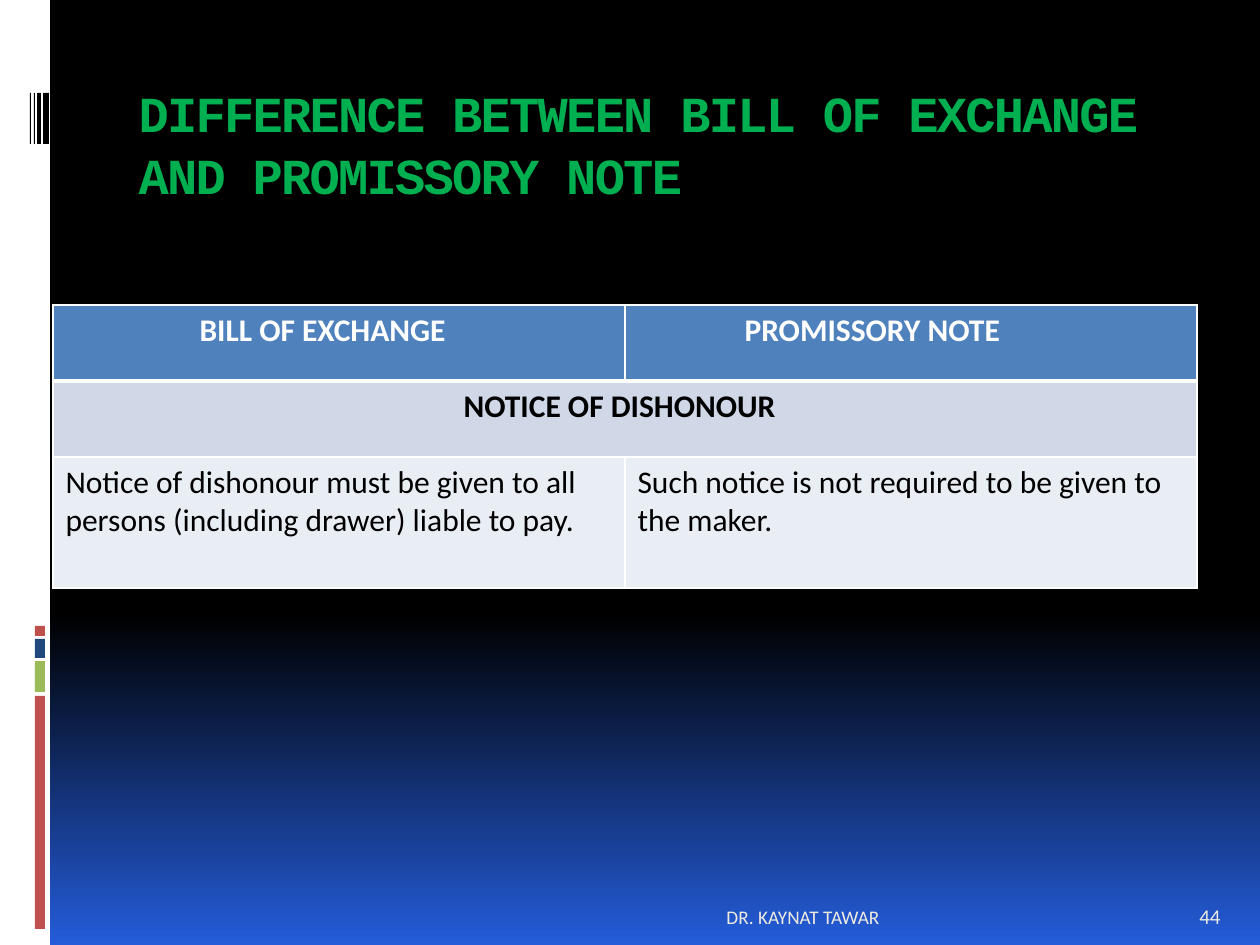
import lxml.etree
import pptx
import pptx.dml.color
import pptx.enum.shapes
import pptx.enum.text
import pptx.oxml.ns
import pptx.util

RGBColor = pptx.dml.color.RGBColor
Align = pptx.enum.text.PP_ALIGN
Anchor = pptx.enum.text.MSO_ANCHOR

WHITE = RGBColor(0xFF, 0xFF, 0xFF)
BLACK = RGBColor(0x00, 0x00, 0x00)
ROYAL = RGBColor(0x24, 0x5C, 0xD9)
RED = RGBColor(0xC0, 0x50, 0x4D)
LIME = RGBColor(0x9B, 0xBB, 0x59)
NAVY = RGBColor(0x1F, 0x49, 0x7D)
GREEN = RGBColor(0x00, 0xB0, 0x50)
CREAM = RGBColor(0xEE, 0xEC, 0xE1)
HEADER_FILL = RGBColor(0x4F, 0x81, 0xBD)
BAND_FILL = RGBColor(0xD0, 0xD8, 0xE8)
ROW_FILL = RGBColor(0xE9, 0xED, 0xF4)


def px(length):
    return pptx.util.Emu(round(length * 914400 / 126))


class SlideBuilder:
    body_font = "Calibri"
    title_font = "Courier New"

    def __init__(self, presentation):
        self.slide = presentation.slides.add_slide(presentation.slide_layouts[5])

    def background(self):
        fill = self.slide.background.fill
        fill.gradient()
        fill.gradient_angle = 270
        for stop, position, color in zip(fill.gradient_stops, (0.65, 1), (BLACK, ROYAL)):
            stop.position = position
            stop.color.rgb = color

    def bar(self, left, top, width, height, color):
        shape = self.slide.shapes.add_shape(
            pptx.enum.shapes.MSO_SHAPE.RECTANGLE, px(left), px(top), px(width), px(height))
        shape.shadow.inherit = False
        shape.fill.solid()
        shape.fill.fore_color.rgb = color
        shape.line.fill.background()

    def run(self, paragraph, text, size, color, bold=False, font=body_font):
        run = paragraph.add_run()
        run.text = text
        run.font.name = font
        run.font.size = pptx.util.Pt(size)
        run.font.bold = bold
        run.font.color.rgb = color
        return run

    def title(self, text, left, top, width, height):
        shape = self.slide.shapes.title
        shape.left, shape.top, shape.width, shape.height = map(px, (left, top, width, height))
        frame = shape.text_frame
        frame.word_wrap = True
        frame.auto_size = pptx.enum.text.MSO_AUTO_SIZE.NONE
        frame.vertical_anchor = Anchor.TOP
        frame.margin_top = px(10)
        paragraph = frame.paragraphs[0]
        paragraph.alignment = Align.LEFT
        paragraph.line_spacing = pptx.util.Pt(35.4)
        run = self.run(paragraph, text, 28.8, GREEN, True, self.title_font)
        run.font._element.set("spc", "-100")

    def text(self, text, left, top, width, height, size, alignment):
        frame = self.slide.shapes.add_textbox(px(left), px(top), px(width), px(height)).text_frame
        frame.word_wrap = True
        frame.vertical_anchor = Anchor.BOTTOM
        frame.paragraphs[0].alignment = alignment
        self.run(frame.paragraphs[0], text, size, CREAM)

    def borders(self, cell, points):
        properties = cell._tc.get_or_add_tcPr()
        for index, (side, width) in enumerate(points.items()):
            line = lxml.etree.Element(pptx.oxml.ns.qn("a:ln" + side), w=str(pptx.util.Pt(width)))
            fill = lxml.etree.SubElement(line, pptx.oxml.ns.qn("a:solidFill"))
            lxml.etree.SubElement(fill, pptx.oxml.ns.qn("a:srgbClr"), val=str(WHITE))
            properties.insert(index, line)

    def table(self, left, top, column_width, rows):
        """Each row is (height, fill, text color, bold, [(text, indent), ...])."""
        columns = max(len(row[-1]) for row in rows)
        table = self.slide.shapes.add_table(
            len(rows), columns, px(left), px(top), px(column_width * columns),
            px(sum(row[0] for row in rows))).table
        for column in table.columns:
            column.width = px(column_width)
        for index, (height, fill, color, bold, entries) in enumerate(rows):
            table.rows[index].height = px(height)
            for cell in table.rows[index].cells:
                cell.fill.solid()
                cell.fill.fore_color.rgb = fill
                self.borders(cell, {"L": 1, "R": 1, "T": 3 if index == 1 else 1,
                                    "B": 3 if index == 0 else 1})
            if len(entries) < columns:
                table.cell(index, 0).merge(table.cell(index, columns - 1))
            for column, (text, indent) in enumerate(entries):
                paragraph = table.cell(index, column).text_frame.paragraphs[0]
                if indent:
                    paragraph._p.get_or_add_pPr().set("marL", str(px(indent)))
                self.run(paragraph, text, 18, color, bold)


def main():
    presentation = pptx.Presentation()
    presentation.slide_width, presentation.slide_height = px(1260), px(945)
    builder = SlideBuilder(presentation)
    builder.background()

    # Side strip with coloured blocks and barcode
    builder.bar(0, 0, 50, 945, WHITE)
    for top, height, color in ((696, 233, RED), (661, 31, LIME), (639, 19, NAVY), (626, 10, RED)):
        builder.bar(35, top, 10, height, color)
    for left, width in ((43, 6), (37, 4), (34, 1), (30, 1)):
        builder.bar(left, 93, width, 51, BLACK)

    # Title
    builder.title("DIFFERENCE BETWEEN BILL OF EXCHANGE AND PROMISSORY NOTE", 126, 71, 1071, 126)

    # Comparison table
    builder.table(53, 305, 572, [
        (76, HEADER_FILL, WHITE, True, [("BILL OF EXCHANGE", 134), ("PROMISSORY NOTE", 107)]),
        (76, BAND_FILL, BLACK, True, [("NOTICE OF DISHONOUR", 398)]),
        (131, ROW_FILL, BLACK, False, [
            ("Notice of dishonour must be given to all persons (including drawer) liable to pay.", 0),
            ("Such notice is not required to be given to the maker.", 0)]),
    ])

    # Footer
    builder.text("44", 1187, 885, 63, 50, 12, Align.LEFT)
    builder.text("DR. KAYNAT TAWAR", 126, 885, 766, 50, 11, Align.RIGHT)

    presentation.save("out.pptx")


if __name__ == "__main__":
    main()
